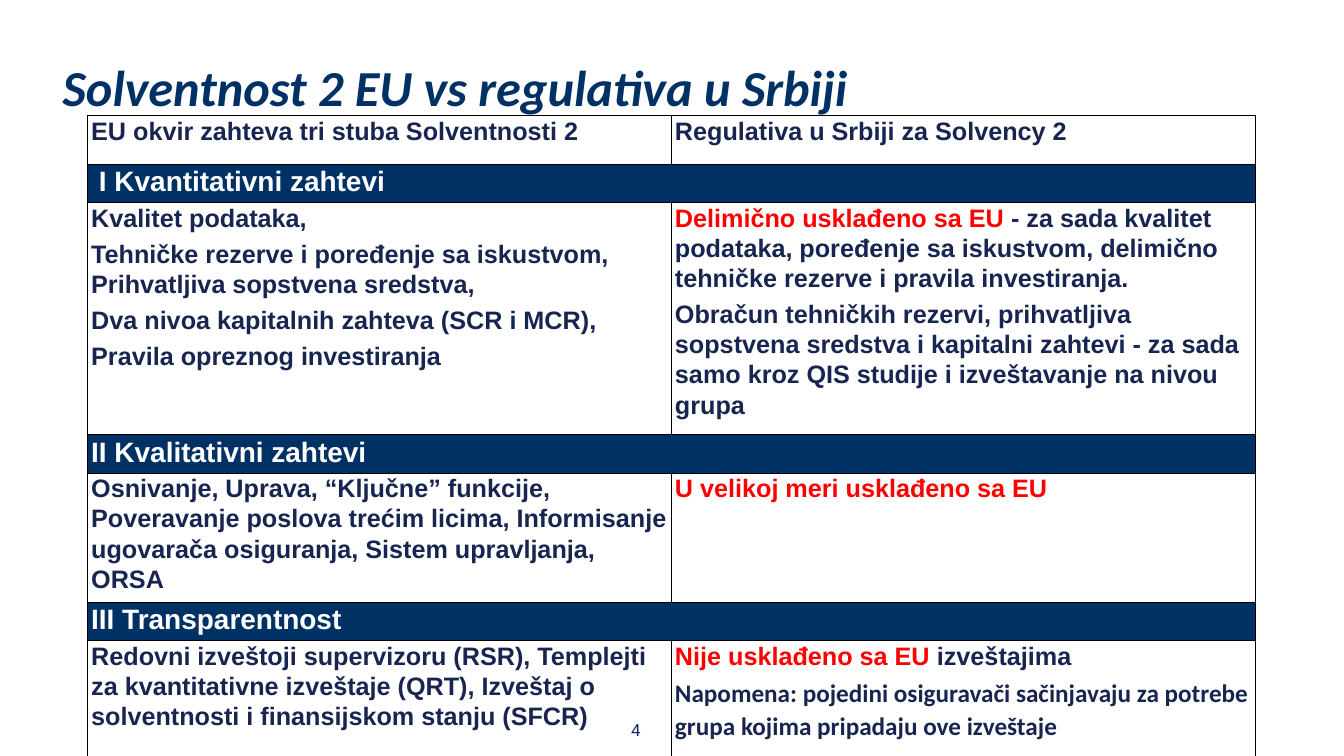
from lxml.etree import SubElement
from pptx import Presentation
from pptx.dml.color import RGBColor
from pptx.enum.text import PP_ALIGN
from pptx.oxml.ns import qn
from pptx.util import Pt

NAVY, INK, RED, WHITE, BLACK = "003165", "182551", "FF0000", "FFFFFF", "000000"
TITLE = "Solventnost 2 EU vs regulativa u Srbiji"
PAGE_NUMBER = "4"

# Row: (height, cells). A single cell is a section band across both columns.
# Cell: list of paragraphs; paragraph: list of (text, colour) runs.
ROWS = [
    (70, [
        [[("EU okvir zahteva tri stuba Solventnosti 2", INK)]],
        [[("Regulativa u Srbiji za Solvency 2", INK)]],
    ]),
    (54.7, [[[(" I Kvantitativni zahtevi", WHITE)]]]),
    (316, [
        [
            [("Kvalitet podataka,", INK)],
            [("Tehničke rezerve i poređenje sa iskustvom, "
              "Prihvatljiva sopstvena sredstva,", INK)],
            [("Dva nivoa kapitalnih zahteva (SCR i MCR),", INK)],
            [("Pravila opreznog investiranja", INK)],
        ],
        [
            [("Delimično usklađeno sa EU ", RED),
             ("- za sada kvalitet podataka, poređenje sa iskustvom, delimično "
              "tehničke rezerve i pravila investiranja.", INK)],
            [("Obračun tehničkih rezervi, prihvatljiva sopstvena sredstva i "
              "kapitalni zahtevi - za sada samo kroz QIS studije i "
              "izveštavanje na nivou grupa", INK)],
        ],
    ]),
    (54.7, [[[("II Kvalitativni zahtevi", WHITE)]]]),
    (159, [
        [[("Osnivanje, Uprava, “Ključne” funkcije, Poveravanje poslova trećim "
           "licima, Informisanje ugovarača osiguranja, Sistem upravljanja, "
           "ORSA", INK)]],
        [[("U velikoj meri usklađeno sa EU", RED)]],
    ]),
    (54.7, [[[("III Transparentnost", WHITE)]]]),
    (169, [
        [[("Redovni izveštoji supervizoru (RSR), Templejti za kvantitativne "
           "izveštaje (QRT), Izveštaj o solventnosti i finansijskom stanju "
           "(SFCR)", INK)]],
        [
            [("Nije usklađeno sa EU ", RED), ("izveštajima", INK)],
            [("Napomena: pojedini osiguravači sačinjavaju za potrebe grupa "
              "kojima pripadaju ove izveštaje", INK)],
        ],
    ]),
]
TABLE_LEFT, TABLE_TOP, COLUMN_WIDTH = 125.3, 164.9, 834


def rgb(value):
    return RGBColor.from_string(value)


def style(font, name, size, colour=None, bold=False, italic=False):
    font.name, font.size, font.bold, font.italic = name, Pt(size), bold, italic
    if colour:
        font.color.rgb = rgb(colour)


def add_text(slide, box, text, wrap=True):
    shape = slide.shapes.add_textbox(*map(Pt, box))
    frame = shape.text_frame
    frame.word_wrap = wrap
    frame.margin_left = frame.margin_right = Pt(4.3)
    frame.margin_top = frame.margin_bottom = Pt(4.3)
    paragraph = frame.paragraphs[0]
    paragraph.text = text
    return paragraph


def add_borders(cell):
    properties = cell._tc.get_or_add_tcPr()
    for index, side in enumerate(("lnL", "lnR", "lnT", "lnB")):
        line = SubElement(properties, qn(f"a:{side}"), w=str(Pt(1)))
        fill = SubElement(line, qn("a:solidFill"))
        SubElement(fill, qn("a:srgbClr"), val=BLACK)
        properties.remove(line)
        properties.insert(index, line)  # borders precede the fill


def fill_cell(cell, paragraphs, size):
    cell.margin_left = cell.margin_right = Pt(5)
    cell.margin_top = cell.margin_bottom = 0
    for index, runs in enumerate(paragraphs):
        frame = cell.text_frame
        paragraph = frame.add_paragraph() if index else frame.paragraphs[0]
        paragraph.line_spacing = 1.07
        paragraph.space_after = Pt(8)
        note = runs[0][0].startswith("Napomena")
        for text, colour in runs:
            run = paragraph.add_run()
            run.text = text
            style(run.font, "Calibri" if note else "Arial", size, colour, bold=True)


def add_requirements_table(slide):
    height = sum(row_height for row_height, _ in ROWS)
    table = slide.shapes.add_table(
        len(ROWS), 2, Pt(TABLE_LEFT), Pt(TABLE_TOP),
        Pt(2 * COLUMN_WIDTH), Pt(height)).table
    table.first_row = table.horz_banding = False
    for column in table.columns:
        column.width = Pt(COLUMN_WIDTH)
    for row_index, (row_height, contents) in enumerate(ROWS):
        table.rows[row_index].height = Pt(row_height)
        is_band = len(contents) == 1
        cells = [table.cell(row_index, column) for column in range(2)]
        if is_band:
            cells[0].merge(cells[1])
        for cell in cells:
            if is_band:
                cell.fill.solid()
                cell.fill.fore_color.rgb = rgb(NAVY)
            else:
                cell.fill.background()
            add_borders(cell)
        for cell, paragraphs in zip(cells, contents):
            fill_cell(cell, paragraphs, 40 if is_band else 36)


def main():
    presentation = Presentation()
    presentation.slide_width, presentation.slide_height = Pt(1920), Pt(1080)
    slide = presentation.slides.add_slide(presentation.slide_layouts[6])

    number = add_text(slide, (890, 1024.5, 36.7, 37.4), PAGE_NUMBER, wrap=False)
    number.alignment = PP_ALIGN.CENTER
    style(number.font, "Roboto", 24, "182565")

    title = add_text(slide, (85, 59, 1748, 210), TITLE)
    title.line_spacing = 1.2
    style(title.font, "Calibri", 72, NAVY, bold=True, italic=True)

    add_requirements_table(slide)
    presentation.save("out.pptx")


if __name__ == "__main__":
    main()
